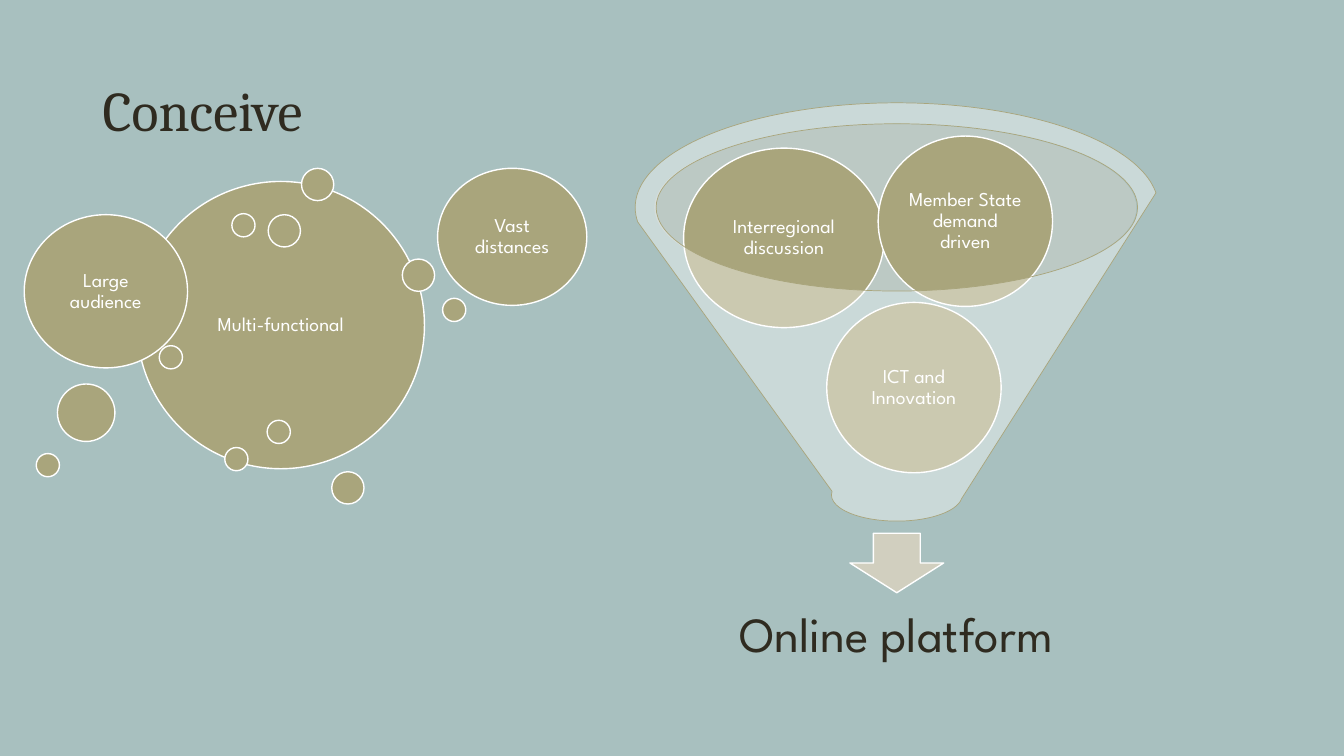
from lxml import etree
from pptx import Presentation, util as u
from pptx.dml.color import RGBColor
from pptx.enum import shapes, text
from pptx.oxml.ns import qn

# Content: lengths in px, 100 to the inch; boxes are left, top, width, height
PX = 9144
SIZE = (1333, 750)
TITLE = ("Conceive", (92, 40, 1150, 145))
RESULT = ("Online platform", (667, 576, 444, 111))
POOL = (649, 123, 478, 166)
ARROW = (843, 529, 93, 59)
CONE = (630, 102, 519, 415)
INPUTS = [
    ("ICT and Innovation", (820, 300, 173, 169)),
    ("Interregional discussion", (678, 147, 199, 178)),
    ("Member State demand driven", (871, 135, 173, 169)),
]
NEEDS = [
    ("Multi-functional", (136, 180, 285, 285)),
    ("Large audience", (24, 213, 162, 152)),
    ("Vast distances", (434, 167, 148, 136)),
]
DOTS = {  # diameter: left and top of each bubble
    57: [(57, 381)],
    32: [(299, 167), (329, 468), (266, 213), (399, 257)],
    23: [(223, 444), (439, 296), (230, 212), (158, 343), (36, 450), (265, 417)],
}

THEME = {
    "back": "A8C0BF", "ink": "2F2B20", "olive": "A9A57C", "white": "FFFFFF",
    "pool": "DAD8CC", "arrow": "D1CFBF",
    "head": "Cambria", "body": "League Spartan",
    "title": 40, "result": 35, "label": 14,
}
KIND = shapes.MSO_SHAPE


def rgb(name):
    return RGBColor.from_string(THEME[name])


def place(box):
    return [u.Emu(n * PX) for n in box]


def assign(item, **vals):
    for key, val in vals.items():
        setattr(item, key, val)


def write(shape, words, size, ink, face="body", align="CENTER", pad=(0, 0)):
    frame = shape.text_frame
    x, y = place(pad)
    assign(frame, word_wrap=True, vertical_anchor=text.MSO_ANCHOR.MIDDLE,
           margin_left=x, margin_right=x, margin_top=y, margin_bottom=y)
    para = frame.paragraphs[0]
    assign(para, line_spacing=0.9, alignment=getattr(text.PP_ALIGN, align))
    run = para.add_run()
    run.text = words
    assign(run.font, name=THEME[face], size=u.Pt(THEME[size]))
    run.font.color.rgb = rgb(ink)


def draw(kind, box, fill="olive", line="white", width=1, alpha=None):
    shape = slide.shapes.add_shape(kind, *place(box))
    shape.shadow.inherit = False
    shape.fill.solid()
    shape.fill.fore_color.rgb = rgb(fill)
    if alpha:
        tint = shape.fill._xPr.find(".//" + qn("a:srgbClr"))
        etree.SubElement(tint, qn("a:alpha")).set("val", str(alpha * 1000))
    if line:
        shape.line.color.rgb = rgb(line)
        shape.line.width = u.Pt(width)
    else:
        shape.line.fill.background()
    return shape


def label(items, pad):
    for words, box in items:
        write(draw(KIND.OVAL, box), words, "label", "white", pad=(pad, pad))


deck = Presentation()
deck.slide_width, deck.slide_height = place(SIZE)
slide = deck.slides.add_slide(deck.slide_layouts[6])
slide.background.fill.solid()
slide.background.fill.fore_color.rgb = rgb("back")

# Title
words, box = TITLE
write(slide.shapes.add_textbox(*place(box)), words, "title", "ink", "head", "LEFT", (10, 5))

# Funnel: pool and inputs lie behind the clear cone
draw(KIND.OVAL, POOL, "pool", None, alpha=40)
draw(KIND.DOWN_ARROW, ARROW, "arrow")
words, box = RESULT
write(slide.shapes.add_textbox(*place(box)), words, "result", "ink", pad=(27, 27))
label(INPUTS, 2)
draw(KIND.FUNNEL, CONE, "white", "olive", 0.5, 40)

# Needs with their bubbles
label(NEEDS, 6)
for wide, spots in DOTS.items():
    for x, y in spots:
        draw(KIND.OVAL, (x, y, wide, wide))

deck.save("out.pptx")
